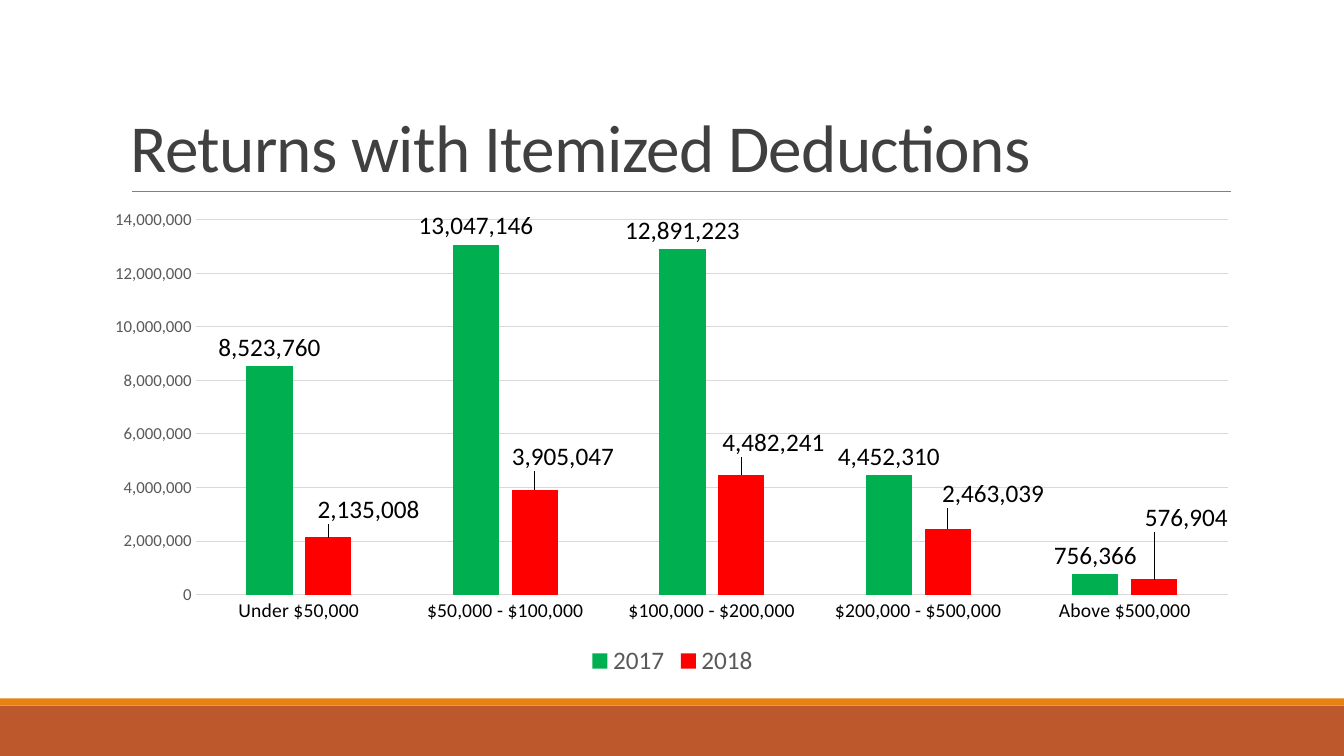
from dataclasses import dataclass

from lxml import etree
from pptx import Presentation
from pptx.chart.data import CategoryChartData
from pptx.dml.color import RGBColor
from pptx.enum.chart import XL_CHART_TYPE, XL_LABEL_POSITION, XL_LEGEND_POSITION, XL_TICK_MARK
from pptx.enum.shapes import MSO_CONNECTOR, MSO_SHAPE
from pptx.enum.text import MSO_ANCHOR
from pptx.oxml import parse_xml
from pptx.oxml.ns import nsdecls, qn
from pptx.util import Inches, Pt

COLUMNS = XL_CHART_TYPE.COLUMN_CLUSTERED
OUTSIDE_END = XL_LABEL_POSITION.OUTSIDE_END
LEGEND_BOTTOM = XL_LEGEND_POSITION.BOTTOM
NO_TICK = XL_TICK_MARK.NONE
STRAIGHT = MSO_CONNECTOR.STRAIGHT
RECTANGLE = MSO_SHAPE.RECTANGLE
ANCHOR_BOTTOM = MSO_ANCHOR.BOTTOM

# Content
TITLE = "Returns with Itemized Deductions"
INCOME_BANDS = ["Under $50,000", "$50,000 - $100,000", "$100,000 - $200,000",
                "$200,000 - $500,000", "Above $500,000"]
RETURNS = {
    "2017": [8523760, 13047146, 12891223, 4452310, 756366],
    "2018": [2135008, 3905047, 4482241, 2463039, 576904],
}
# Inches each 2018 label is moved right and down from its bar
LABEL_SHIFTS = [(0.4, -0.09), (0.28, -0.14), (0.32, -0.13), (0.45, -0.16), (0.32, -0.42)]


@dataclass(frozen=True)
class Theme:
    font: str = "Calibri"
    title: str = "404040"
    rule: str = "808080"
    footer: str = "BD582C"
    stripe: str = "E48312"
    grid: str = "D9D9D9"
    muted: str = "595959"
    text: str = "000000"
    white: str = "FFFFFF"
    bars: tuple = ("00B050", "FF0000")
    title_size: float = 48
    label_size: float = 18
    category_size: float = 14
    value_size: float = 12
    base_size: float = 10


THEME = Theme()

# Geometry in inches: left, top, width, height
WIDTH, HEIGHT = 13.33, 7.5
FOOTER_HEIGHT, STRIPE_HEIGHT = 0.5, 0.07
FOOTER_TOP = HEIGHT - FOOTER_HEIGHT
TITLE_AREA = (1.2, 0.31, 11, 1.59)
RULE_LEFT, RULE_RIGHT, RULE_TOP = 1.31, 12.21, 1.9
CHART_AREA = (0.92, 2, 11.5, 4.76)
PLOT_AREA = (1.94, 2.18, 10.24, 3.72)


def color(code):
    return RGBColor.from_string(code)


def style_font(font, size, code):
    font.name, font.size, font.bold = THEME.font, Pt(size), False
    font.color.rgb = color(code)


def style_line(line, code, width):
    line.color.rgb = color(code)
    line.width = Pt(width)


def add_band(page, top, height, code):
    band = page.shapes.add_shape(RECTANGLE, 0, Inches(top), Inches(WIDTH), Inches(height))
    band.shadow.inherit = False
    band.fill.solid()
    band.fill.fore_color.rgb = color(code)
    band.line.fill.background()


def manual_layout(**settings):
    parts = "".join(f'<c:{name} val="{value}"/>' for name, value in settings.items())
    return parse_xml(f'<c:layout {nsdecls("c")}><c:manualLayout>{parts}'
                     '</c:manualLayout></c:layout>')


def add_title(page):
    box = page.shapes.add_textbox(*map(Inches, TITLE_AREA))
    frame = box.text_frame
    frame.word_wrap = True
    frame.vertical_anchor = ANCHOR_BOTTOM
    frame.text = TITLE
    para = frame.paragraphs[0]
    para.line_spacing = 0.85
    span = para.runs[0]
    style_font(span.font, THEME.title_size, THEME.title)
    span.font._element.set("spc", "-50")


def add_rule(page):
    rule = page.shapes.add_connector(STRAIGHT, Inches(RULE_LEFT), Inches(RULE_TOP),
                                     Inches(RULE_RIGHT), Inches(RULE_TOP))
    style_line(rule.line, THEME.rule, 0.5)
    etree.SubElement(rule._element.spPr, qn("a:effectLst"))


def style_axes(chart):
    bands, counts = chart.category_axis, chart.value_axis
    for axis in (bands, counts):
        axis.major_tick_mark = axis.minor_tick_mark = NO_TICK
    bands.has_major_gridlines = False
    style_line(bands.format.line, THEME.grid, 0.75)
    style_font(bands.tick_labels.font, THEME.category_size, THEME.text)
    style_line(counts.major_gridlines.format.line, THEME.grid, 0.75)
    counts.format.line.fill.background()
    counts.tick_labels.number_format = "#,##0"
    counts.tick_labels.number_format_is_linked = False
    style_font(counts.tick_labels.font, THEME.value_size, THEME.muted)


def style_bars(plot):
    plot.gap_width, plot.overlap, plot.vary_by_categories = 219, -27, False
    for series, code in zip(plot.series, THEME.bars):
        series.format.fill.solid()
        series.format.fill.fore_color.rgb = color(code)
        labels = series.data_labels
        labels.show_value = True
        labels.position = OUTSIDE_END
        labels.number_format = "#,##0"
        labels.number_format_is_linked = False
        style_font(labels.font, THEME.label_size, THEME.text)


def shift_labels(series):
    chart_width, chart_height = CHART_AREA[2:]
    for index, (right, down) in enumerate(LABEL_SHIFTS):
        label = series.points[index].data_label
        label.position = OUTSIDE_END
        style_font(label.font, THEME.label_size, THEME.text)
        layout = manual_layout(x=right / chart_width, y=down / chart_height)
        series._element.findall(".//" + qn("c:dLbl"))[index].insert(1, layout)


def place_plot(chart):
    left, top, width, height = PLOT_AREA
    chart_left, chart_top, chart_width, chart_height = CHART_AREA
    area = chart._chartSpace.find(".//" + qn("c:plotArea"))
    for old in area.findall(qn("c:layout")):
        area.remove(old)
    area.insert(0, manual_layout(
        layoutTarget="inner", xMode="edge", yMode="edge",
        x=(left - chart_left) / chart_width, y=(top - chart_top) / chart_height,
        w=width / chart_width, h=height / chart_height))
    area.append(parse_xml(
        f'<c:spPr {nsdecls("c", "a")}><a:solidFill><a:srgbClr val="{THEME.white}"/>'
        '</a:solidFill></c:spPr>'))


def add_returns_chart(page):
    data = CategoryChartData(number_format="#,##0")
    data.categories = INCOME_BANDS
    for year, counts in RETURNS.items():
        data.add_series(year, counts)
    chart = page.shapes.add_chart(COLUMNS, *map(Inches, CHART_AREA), data).chart
    style_font(chart.font, THEME.base_size, THEME.text)
    chart.has_title = False
    chart.has_legend = True
    chart.legend.position = LEGEND_BOTTOM
    chart.legend.include_in_layout = False
    style_font(chart.legend.font, THEME.label_size, THEME.muted)
    style_axes(chart)
    style_bars(chart.plots[0])
    shift_labels(chart.plots[0].series[1])
    place_plot(chart)


def main():
    deck = Presentation()
    deck.slide_width, deck.slide_height = Inches(WIDTH), Inches(HEIGHT)
    page = deck.slides.add_slide(deck.slide_layouts[6])
    add_band(page, FOOTER_TOP, FOOTER_HEIGHT, THEME.footer)
    add_band(page, FOOTER_TOP - STRIPE_HEIGHT, STRIPE_HEIGHT, THEME.stripe)
    add_rule(page)
    add_title(page)
    add_returns_chart(page)
    deck.save("out.pptx")


if __name__ == "__main__":
    main()
